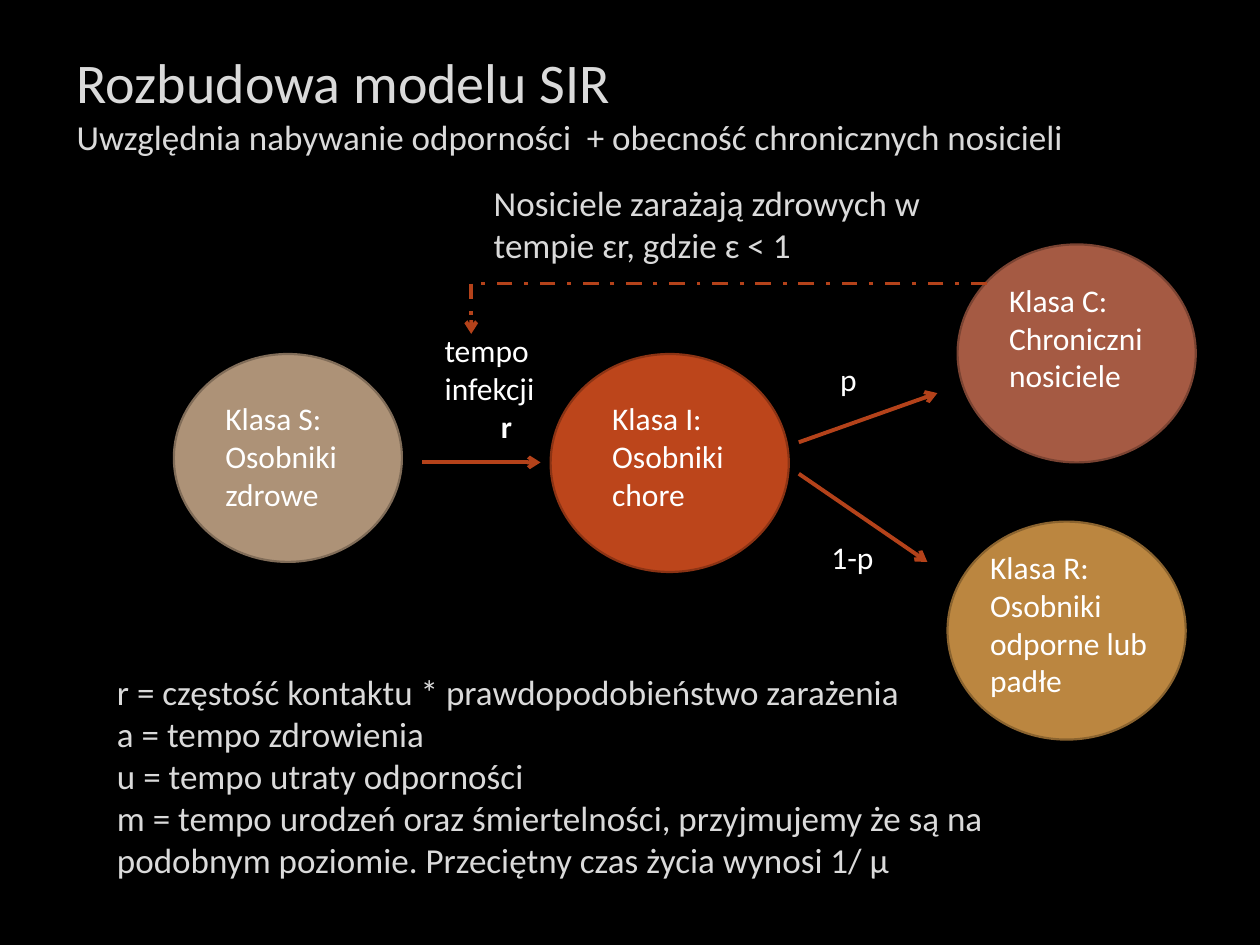
from lxml import etree
from pptx import Presentation
from pptx import util as u
from pptx.dml.color import RGBColor
from pptx.enum import dml, shapes, text
from pptx.oxml.ns import qn

COLUMNS, ROWS = 100, 75
WHITE, PALE, RUST = "FFFFFF", "DADADA", "B4421A"


def color(value):
    return RGBColor.from_string(value)


class Board:
    font = "Calibri"

    def __init__(self, deck):
        self.deck = deck
        self.page = deck.slides.add_slide(deck.slide_layouts[6])
        self.page.background.fill.solid()
        self.page.background.fill.fore_color.rgb = color("000000")

    def across(self, columns):
        return round(self.deck.slide_width * columns / COLUMNS)

    def down(self, rows):
        return round(self.deck.slide_height * rows / ROWS)

    def place(self, left, top, width, height):
        return self.across(left), self.down(top), self.across(width), self.down(height)

    def circle(self, area, fill, edge):
        disc = self.page.shapes.add_shape(shapes.MSO_SHAPE.OVAL, *self.place(*area))
        disc.shadow.inherit = False
        disc.fill.solid()
        disc.fill.fore_color.rgb = color(fill)
        disc.line.color.rgb = color(edge)
        disc.line.width = u.Pt(1.25)

    def caption(self, area, lines, size=18, ink=WHITE):
        box = self.page.shapes.add_textbox(*self.place(*area))
        frame = box.text_frame
        frame.word_wrap = True
        frame.auto_size = text.MSO_AUTO_SIZE.SHAPE_TO_FIT_TEXT
        paras = []
        for number, line in enumerate(lines):
            para = frame.add_paragraph() if number else frame.paragraphs[0]
            span = para.add_run()
            span.text = line
            span.font.name = self.font
            span.font.size = u.Pt(size)
            span.font.color.rgb = color(ink)
            paras.append(para)
        return paras

    def link(self, start, end, dashed=False, arrow=True):
        link = self.page.shapes.add_connector(
            shapes.MSO_CONNECTOR.STRAIGHT,
            self.across(start[0]), self.down(start[1]),
            self.across(end[0]), self.down(end[1]))
        link.line.color.rgb = color(RUST)
        link.line.width = u.Pt(2.25)
        if dashed:
            link.line.dash_style = dml.MSO_LINE.DASH_DOT
        style = link._element.spPr
        if arrow:
            etree.SubElement(style.find(qn("a:ln")), qn("a:tailEnd"), type="arrow")
        etree.SubElement(style, qn("a:effectLst"))


def main():
    deck = Presentation()
    deck.slide_width, deck.slide_height = u.Inches(10), u.Inches(7.5)
    board = Board(deck)

    classes = [
        ((13.8, 28.1, 18.1, 16.5), "AD9277", "806C58",
         (16.9, 31.2, 18.1, 10.1), ["Klasa S:", "Osobniki zdrowe"]),
        ((43.7, 28.1, 18.9, 17.3), "BC451B", "8B3314",
         (47.6, 31.2, 18.1, 10.1), ["Klasa I:", "Osobniki", "chore"]),
        ((76, 19.4, 18.9, 17.3), "A55A43", "7A4332",
         (79.1, 21.8, 18.1, 10.1), ["Klasa C:", "Chroniczni nosiciele"]),
        ((75.2, 41.4, 18.9, 17.3), "BB8640", "8A632F",
         (77.6, 43, 18.1, 13.1), ["Klasa R:", "Osobniki odporne lub padłe"]),
    ]
    for disc, fill, edge, area, lines in classes:
        board.circle(disc, fill, edge)
        board.caption(area, lines)

    board.link((33.5, 36.7), (42.9, 36.7))
    board.link((63.4, 35.1), (74.4, 31.2))
    board.link((63.4, 37.6), (73.6, 44.6))
    corner = (37.4, 22.5)
    board.link((78.3, 22.5), corner, dashed=True, arrow=False)
    board.link(corner, (37.4, 26.5), dashed=True)

    rate = board.caption((34.3, 25.8, 11.8, 10.1), ["tempo", "infekcji", "r"])[-1]
    rate.alignment = text.PP_ALIGN.CENTER
    rate.runs[0].font.bold = True
    board.caption((65.7, 28.1, 4.7, 4), ["p"])
    board.caption((65, 42.2, 6.3, 4), ["1-p"])

    title = board.caption((5.1, 3.3, 90.6, 9.8), [
        "Rozbudowa modelu SIR",
        "Uwzględnia nabywanie odporności  + obecność chronicznych nosicieli",
    ], 20, PALE)[0]
    title.runs[0].font.size = u.Pt(32)
    board.caption((38.2, 13.9, 37, 7.7),
                  ["Nosiciele zarażają zdrowych w tempie ɛr, gdzie ɛ < 1"], 20, PALE)
    board.caption((8.3, 52.7, 81.1, 17.8), [
        "r = częstość kontaktu * prawdopodobieństwo zarażenia",
        "a = tempo zdrowienia",
        "u = tempo utraty odporności",
        "m = tempo urodzeń oraz śmiertelności, przyjmujemy że są na podobnym "
        "poziomie. Przeciętny czas życia wynosi 1/ µ",
    ], 20, PALE)

    deck.save("out.pptx")


if __name__ == "__main__":
    main()
